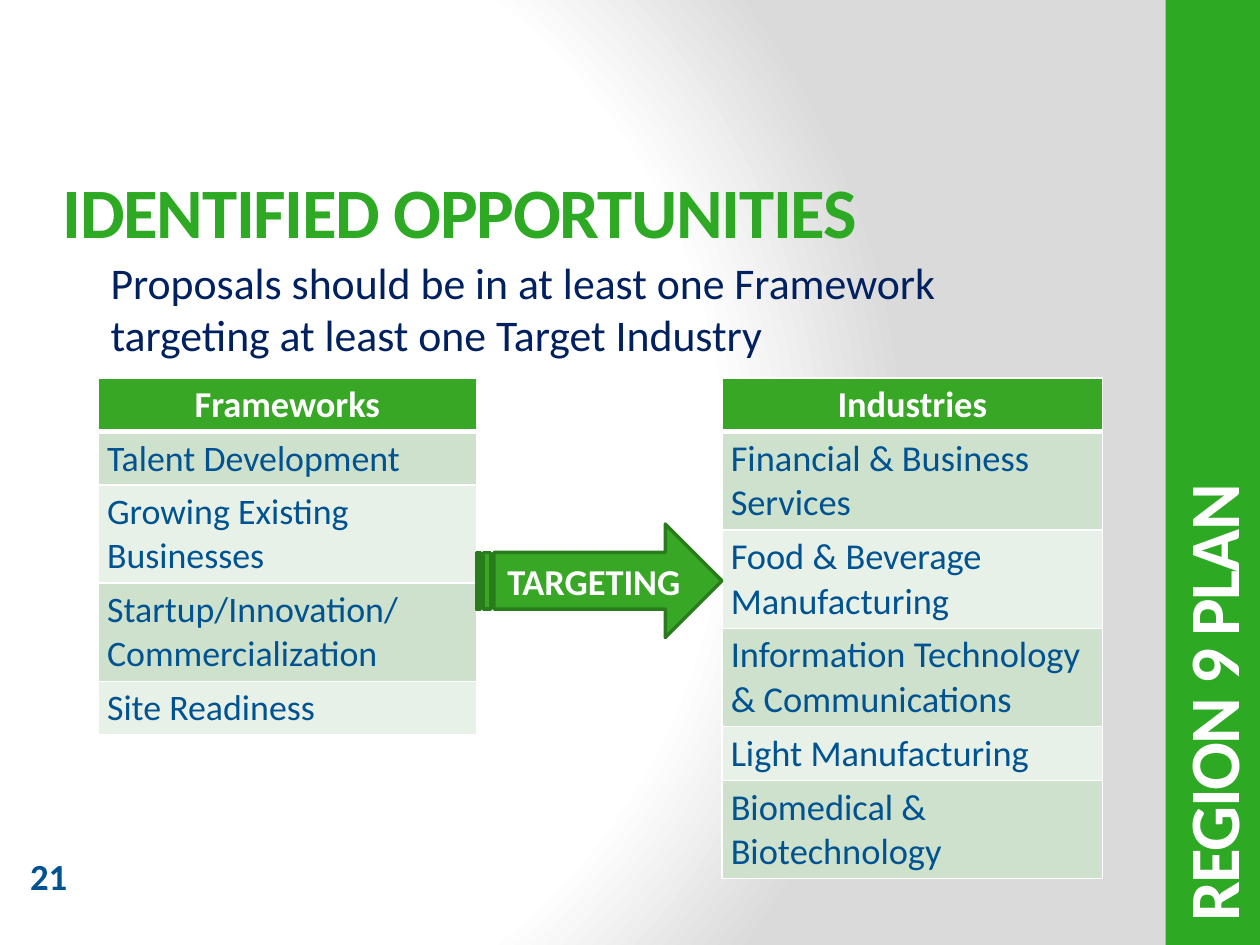
from dataclasses import dataclass

import pptx
import pptx.dml.color
import pptx.enum.shapes
import pptx.enum.text
import pptx.oxml
import pptx.oxml.ns
import pptx.util
from pptx.util import Inches

RGBColor = pptx.dml.color.RGBColor
ALIGN = pptx.enum.text.PP_ALIGN
ANCHOR = pptx.enum.text.MSO_ANCHOR
SHAPE = pptx.enum.shapes.MSO_SHAPE
NS = pptx.oxml.ns.nsdecls("a")

FONT = "Calibri"
GREEN = RGBColor(0x2D, 0xA9, 0x23)
ACCENT = RGBColor(0x38, 0xA7, 0x25)
DARK_GREEN = RGBColor(0x29, 0x7C, 0x1B)
BAND = RGBColor(0xCE, 0xE1, 0xCD)
BAND_LIGHT = RGBColor(0xE8, 0xF1, 0xE8)
BLUE = RGBColor(0x00, 0x53, 0x90)
NAVY = RGBColor(0x00, 0x20, 0x60)
WHITE = RGBColor(0xFF, 0xFF, 0xFF)

HEADER_SIZE = 20.8
ONE_LINE, TWO_LINES = 0.42, 0.78  # row heights


@dataclass
class Style:
    size: float
    color: RGBColor
    bold: bool = True
    spacing: float = 0


@dataclass
class Row:
    lines: list[str]
    height: float = TWO_LINES


@dataclass
class Listing:
    title: str
    left: float
    width: float
    size: float
    rows: list[Row]


HEADER = Style(HEADER_SIZE, WHITE)

LISTINGS = [
    Listing("Frameworks", 0.78, 3, 20.5, [
        Row(["Talent Development"], ONE_LINE),
        Row(["Growing Existing Businesses"]),
        Row(["Startup/Innovation/", "Commercialization"]),
        Row(["Site Readiness"], ONE_LINE),
    ]),
    Listing("Industries", 5.73, 3.02, HEADER_SIZE, [
        Row(["Financial & Business Services"]),
        Row(["Food & Beverage Manufacturing"]),
        Row(["Information Technology & Communications"]),
        Row(["Light Manufacturing"], ONE_LINE),
        Row(["Biomedical & Biotechnology"]),
    ]),
]


def write(tf, lines: list[str], style: Style, align=ALIGN.LEFT) -> None:
    for i, line in enumerate(lines):
        p = tf.add_paragraph() if i else tf.paragraphs[0]
        p.alignment = align
        r = p.add_run()
        r.text = line
        r.font.name = FONT
        r.font.size = pptx.util.Pt(style.size)
        r.font.bold = style.bold
        r.font.color.rgb = style.color
        if style.spacing:
            r.font._element.set("spc", str(round(style.spacing * 100)))


def add_text(s, box: tuple, text: str, style: Style, anchor=ANCHOR.TOP):
    sp = s.shapes.add_textbox(*map(Inches, box))
    tf = sp.text_frame
    tf.word_wrap = True
    tf.vertical_anchor = anchor
    write(tf, [text], style)
    return sp


def add_shape(s, kind, box: tuple, fill: RGBColor):
    sp = s.shapes.add_shape(kind, *map(Inches, box))
    sp.shadow.inherit = False
    sp.fill.solid()
    sp.fill.fore_color.rgb = fill
    sp.line.fill.background()
    return sp


def set_borders(cell, top: float, bottom: float) -> None:
    tc_pr = cell._tc.get_or_add_tcPr()
    widths = {"lnL": 1, "lnR": 1, "lnT": top, "lnB": bottom}
    for i, (tag, width) in enumerate(widths.items()):
        tc_pr.insert(i, pptx.oxml.parse_xml(
            f'<a:{tag} {NS} w="{pptx.util.Pt(width)}"><a:solidFill>'
            f'<a:srgbClr val="{WHITE}"/></a:solidFill></a:{tag}>'))


def add_listing(s, item: Listing) -> None:
    rows = [Row([item.title], ONE_LINE)] + item.rows
    height = sum(row.height for row in rows)
    table = s.shapes.add_table(len(rows), 1, Inches(item.left), Inches(3),
                               Inches(item.width), Inches(height)).table
    body = Style(item.size, BLUE, bold=False)
    for i, row in enumerate(rows):
        table.rows[i].height = Inches(row.height)
        cell = table.cell(i, 0)
        cell.margin_left = cell.margin_right = Inches(0.07)
        cell.margin_top = cell.margin_bottom = Inches(0.04)
        cell.fill.solid()
        cell.fill.fore_color.rgb = (BAND if i % 2 else BAND_LIGHT) if i else ACCENT
        set_borders(cell, top=3 if i == 1 else 1, bottom=1 if i else 3)
        write(cell.text_frame, row.lines, body if i else HEADER,
              ALIGN.LEFT if i else ALIGN.CENTER)


def set_background(s) -> None:
    s.background.fill.solid()
    bg_pr = s._element.find(".//" + pptx.oxml.ns.qn("p:bgPr"))
    stops = "".join(
        f'<a:gs pos="{pos * 1000}"><a:srgbClr val="{color}"/></a:gs>'
        for pos, color in [(0, "FFFFFF"), (75, "FFFFFF"), (100, "DADADA")])
    bg_pr.replace(bg_pr[0], pptx.oxml.parse_xml(
        f'<a:gradFill {NS} rotWithShape="1"><a:gsLst>{stops}</a:gsLst>'
        '<a:path path="circle"><a:fillToRect l="20000" t="50000" '
        'r="100000" b="50000"/></a:path></a:gradFill>'))


def main() -> None:
    prs = pptx.Presentation()
    prs.slide_width, prs.slide_height = Inches(10), Inches(7.5)
    s = prs.slides.add_slide(prs.slide_layouts[6])
    set_background(s)

    # Side band and page number
    add_shape(s, SHAPE.RECTANGLE, (9.25, 0, 0.75, 7.5), GREEN)
    add_text(s, (0.14, 6.73, 0.8, 0.57), "21", Style(21, BLUE))

    # Title
    add_text(s, (0.4, 1.2, 8.61, 0.94), "IDENTIFIED OPPORTUNITIES",
             Style(40.5, GREEN, spacing=-0.8), ANCHOR.MIDDLE)

    # Tables
    for item in LISTINGS:
        add_listing(s, item)

    # Arrow between the tables, its label kept on one line
    sp = add_shape(s, SHAPE.STRIPED_RIGHT_ARROW, (3.78, 4.16, 1.95, 0.9), ACCENT)
    sp.line.color.rgb = DARK_GREEN
    sp.line.width = pptx.util.Pt(2)
    tf = sp.text_frame
    tf.word_wrap = False
    tf.vertical_anchor = ANCHOR.MIDDLE
    tf.margin_left = tf.margin_right = 0
    write(tf, ["TARGETING"], HEADER, ALIGN.CENTER)

    # Introduction
    add_text(s, (0.78, 2.05, 7.87, 0.86),
             "Proposals should be in at least one Framework targeting "
             "at least one Target Industry",
             Style(25, NAVY, bold=False), ANCHOR.BOTTOM)

    # Vertical label on the side band
    sp = add_text(s, (6.66, 4.05, 5.91, 0.81), "REGION 9 PLAN",
                  Style(40.5, WHITE, spacing=-1), ANCHOR.MIDDLE)
    sp.rotation = 270

    prs.save("out.pptx")


if __name__ == "__main__":
    main()
